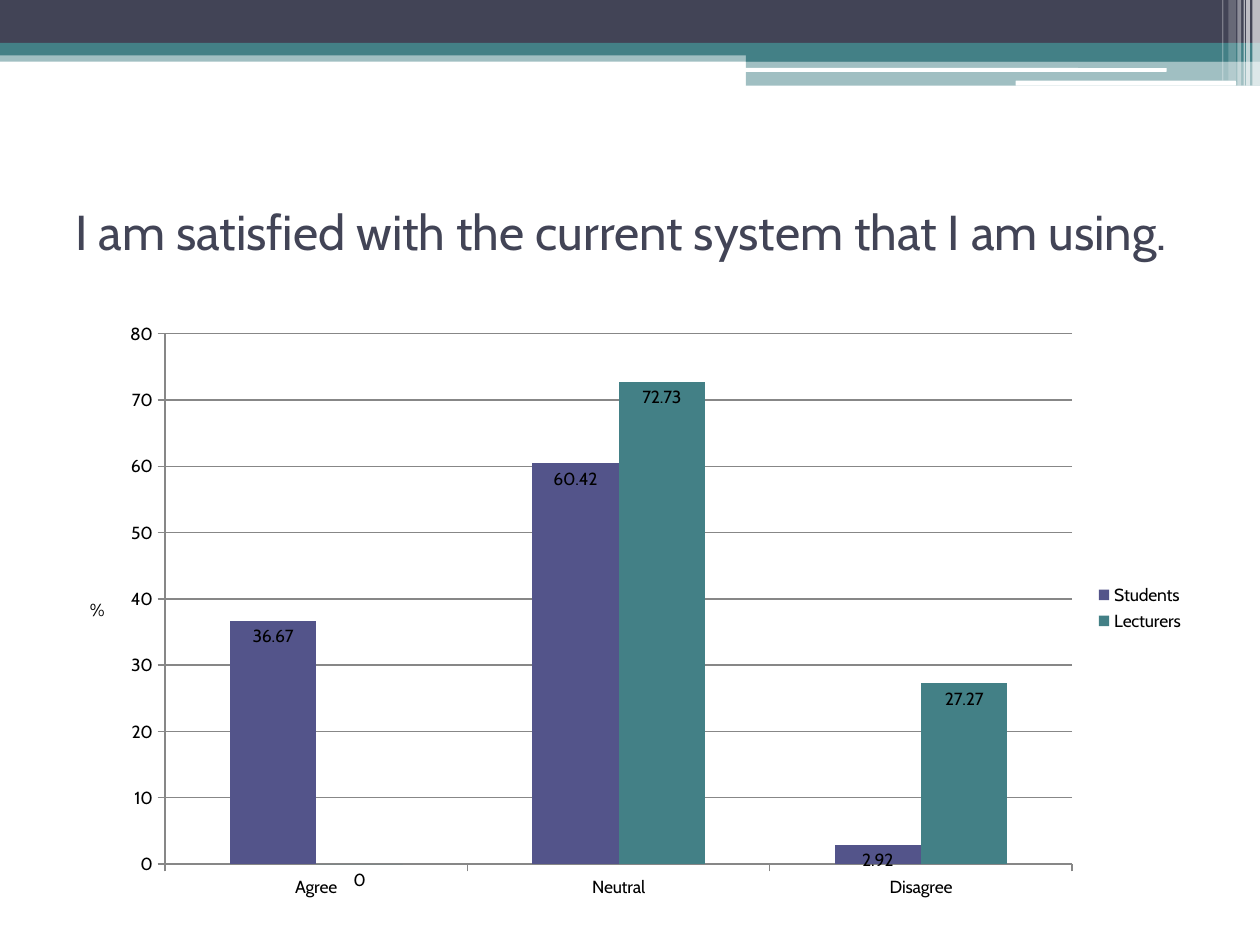
from dataclasses import dataclass

import pptx
import pptx.chart.data
import pptx.dml.color
import pptx.enum.chart
import pptx.enum.shapes
import pptx.enum.text
import pptx.oxml
import pptx.oxml.ns
import pptx.util
from lxml import etree

Inches = pptx.util.Inches
Pt = pptx.util.Pt
RGBColor = pptx.dml.color.RGBColor
Kind = pptx.enum.shapes.MSO_SHAPE
qn = pptx.oxml.ns.qn

FONT = "Cabin"
NAVY = RGBColor(0x42, 0x44, 0x56)
TEAL = RGBColor(0x43, 0x80, 0x86)
PLUM = RGBColor(0x53, 0x54, 0x8A)
GRAY = RGBColor(0x87, 0x87, 0x87)
WHITE = RGBColor(0xFF, 0xFF, 0xFF)
BLACK = RGBColor(0, 0, 0)


@dataclass
class Band:
    left: float
    top: float
    width: float
    height: float
    color: RGBColor
    alpha: int = 100
    kind: Kind = Kind.RECTANGLE


@dataclass
class Group:
    name: str
    values: tuple
    color: RGBColor


BANDS = [
    Band(0, 0.4, 10, 0.09, TEAL, 50),
    Band(0, 0, 10, 0.34, NAVY),
    Band(0, 0.34, 10, 0.1, TEAL),
    Band(5.92, 0.39, 4.08, 0.1, TEAL),
    Band(5.92, 0.48, 4.08, 0.2, TEAL, 50),
    Band(5.91, 0.54, 3.35, 0.03, WHITE, kind=Kind.ROUNDED_RECTANGLE),
    Band(8.06, 0.64, 1.75, 0.04, WHITE, kind=Kind.ROUNDED_RECTANGLE),
]
# left, width, height, opacity of each pale stripe
STRIPES = [
    (9.94, 0.06, 0.68, 65),
    (9.89, 0.03, 0.68, 65),
    (9.87, 0.01, 0.68, 60),
    (9.82, 0.03, 0.68, 40),
    (9.75, 0.06, 0.64, 20),
    (9.7, 0.01, 0.64, 30),
]
BANDS += [Band(x, 0, w, h, WHITE, a) for x, w, h, a in STRIPES]

CATS = ("Agree", "Neutral", "Disagree")
GROUPS = [
    Group("Students", (36.67, 60.42, 2.92), PLUM),
    Group("Lecturers", (0, 72.73, 27.27), TEAL),
]


def add_band(slide, band: Band) -> None:
    box = (band.left, band.top, band.width, band.height)
    shape = slide.shapes.add_shape(band.kind, *map(Inches, box))
    shape.shadow.inherit = False
    shape.line.fill.background()
    shape.fill.solid()
    shape.fill.fore_color.rgb = band.color
    if band.alpha < 100:
        tint = shape.fill._xPr.find(qn("a:solidFill"))[0]
        etree.SubElement(tint, qn("a:alpha"), val=str(band.alpha * 1000))


def set_font(font, size: float, color: RGBColor) -> None:
    font.name = FONT
    font.size = Pt(size)
    font.bold = False
    font.color.rgb = color


def put_text(frame, text: str, *, size: float, color: RGBColor) -> None:
    run = frame.paragraphs[0].add_run()
    run.text = text
    set_font(run.font, size, color)


def add_title(slide, text: str) -> None:
    box = slide.shapes.add_textbox(Inches(0.5), Inches(1.25), Inches(9), Inches(1.17))
    frame = box.text_frame
    frame.word_wrap = True
    frame.vertical_anchor = pptx.enum.text.MSO_ANCHOR.MIDDLE
    put_text(frame, text, size=28, color=NAVY)


def set_plot(chart, **sides: float) -> None:
    """Fix the inner plot area, in fractions of the chart."""
    area = chart._chartSpace.chart.plotArea
    for old in area.findall(qn("c:layout")):
        area.remove(old)
    layout = etree.Element(qn("c:layout"))
    area.insert(0, layout)
    manual = etree.SubElement(layout, qn("c:manualLayout"))
    parts = {"layoutTarget": "inner", "xMode": "edge", "yMode": "edge", **sides}
    for tag, value in parts.items():
        etree.SubElement(manual, qn(f"c:{tag}"), val=str(value))


def style_axes(chart) -> None:
    cat, val = chart.category_axis, chart.value_axis
    for axis in (cat, val):
        axis.major_tick_mark = pptx.enum.chart.XL_TICK_MARK.OUTSIDE
        axis.minor_tick_mark = pptx.enum.chart.XL_TICK_MARK.NONE
        axis.format.line.color.rgb = GRAY
        axis.format.line.width = Pt(0.75)
    cat.has_major_gridlines = False
    val.has_major_gridlines = True
    val.major_gridlines.format.line.color.rgb = GRAY
    val.major_gridlines.format.line.width = Pt(0.75)
    val.minimum_scale, val.maximum_scale, val.major_unit = 0, 80, 10
    frame = val.axis_title.text_frame
    put_text(frame, "%", size=10, color=BLACK)
    frame._txBody.bodyPr.set("rot", "0")
    frame._txBody.bodyPr.set("vert", "horz")


def add_chart(slide) -> None:
    data = pptx.chart.data.CategoryChartData()
    data.categories = CATS
    for group in GROUPS:
        data.add_series(group.name, group.values)
    chart = slide.shapes.add_chart(
        pptx.enum.chart.XL_CHART_TYPE.COLUMN_CLUSTERED,
        Inches(0.5), Inches(2.46), Inches(9), Inches(4.73), data,
    ).chart
    set_font(chart.font, 10, BLACK)
    chart.has_title = False
    chart.has_legend = True
    chart.legend.position = pptx.enum.chart.XL_LEGEND_POSITION.RIGHT
    chart.legend.include_in_layout = False
    style_axes(chart)
    set_plot(chart, x=0.09, y=0.04, w=0.8, h=0.89)

    plot = chart.plots[0]
    plot.vary_by_categories = False
    plot.gap_width = 150
    plot.overlap = 0
    for series, group in zip(plot.series, GROUPS):
        series.format.fill.solid()
        series.format.fill.fore_color.rgb = group.color
        series.invert_if_negative = False
        labels = series.data_labels
        labels.show_value = True
        labels.position = pptx.enum.chart.XL_LABEL_POSITION.INSIDE_END
        set_font(labels.font, 10, BLACK)


def main() -> None:
    deck = pptx.Presentation()
    deck.slide_width, deck.slide_height = Inches(10), Inches(7.5)
    slide = deck.slides.add_slide(deck.slide_layouts[6])
    for band in BANDS:
        add_band(slide, band)
    add_title(slide, "I am satisfied with the current system that I am using.")
    add_chart(slide)
    deck.save("out.pptx")


if __name__ == "__main__":
    main()
